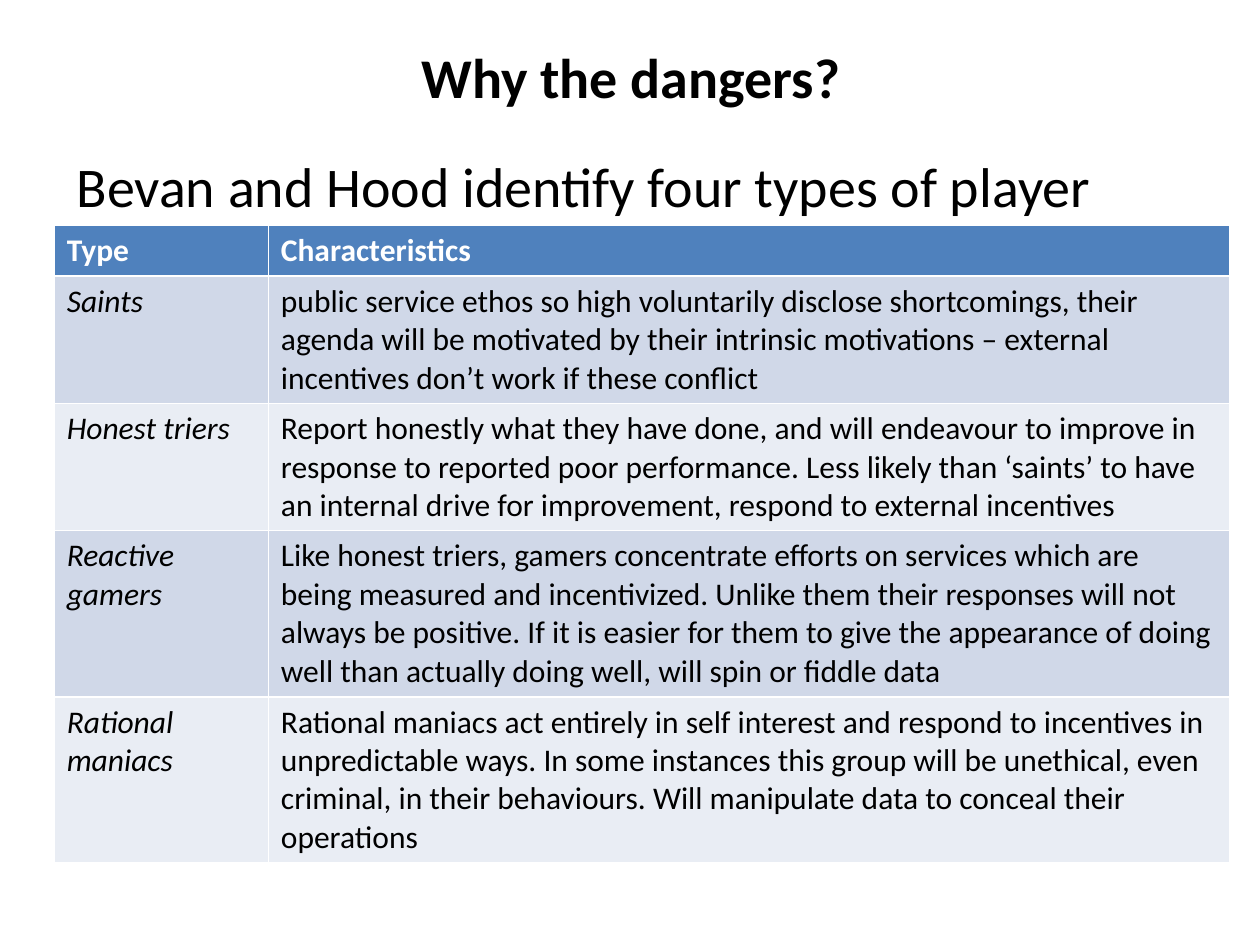
from typing import NamedTuple

from pptx import Presentation
from pptx.dml.color import RGBColor
from pptx.enum import text
from pptx.util import Inches, Pt

FONT = "Calibri"
COLORS = {
    "text": "000000",
    "header_text": "FFFFFF",
    "header": "4F81BD",
    "band_dark": "D0D8E8",
    "band_light": "E9EDF4",
}


class Player(NamedTuple):
    type: str
    characteristics: str
    height: float


PLAYERS = [
    Player("Saints",
           "public service ethos so high voluntarily disclose shortcomings, their agenda "
           "will be motivated by their intrinsic motivations – external incentives don’t "
           "work if these conflict", 1.01),
    Player("Honest triers",
           "Report honestly what they have done, and will endeavour to improve in response "
           "to reported poor performance. Less likely than ‘saints’ to have an internal "
           "drive for improvement, respond to external incentives", 1.01),
    Player("Reactive gamers",
           "Like honest triers, gamers concentrate efforts on services which are being "
           "measured and incentivized. Unlike them their responses will not always be "
           "positive. If it is easier for them to give the appearance of doing well than "
           "actually doing well, will spin or fiddle data", 1.32),
    Player("Rational maniacs",
           "Rational maniacs act entirely in self interest and respond to incentives in "
           "unpredictable ways. In some instances this group will be unethical, even "
           "criminal, in their behaviours. Will manipulate data to conceal their "
           "operations", 1.32),
]
HEADER_HEIGHT = 0.4
COLUMN_WIDTHS = (1.7, 7.63)


def write(text_frame, words: str, size: float, color: str = "text",
          bold: bool = False, italic: bool = False) -> None:
    text_frame.text = words
    font = text_frame.paragraphs[0].runs[0].font
    font.name, font.size = FONT, Pt(size)
    font.bold, font.italic = bold, italic
    font.color.rgb = RGBColor.from_string(COLORS[color])


def fill_cell(cell, words: str, fill: str, **style) -> None:
    cell.fill.solid()
    cell.fill.fore_color.rgb = RGBColor.from_string(COLORS[fill])
    write(cell.text_frame, words, 18, **style)


def add_title(slide) -> None:
    title = slide.shapes.title
    title.left, title.top = Inches(0.51), Inches(-0.02)
    title.width, title.height = Inches(9), Inches(1.25)
    write(title.text_frame, "Why the dangers?", 32, bold=True)
    title.text_frame.vertical_anchor = text.MSO_ANCHOR.MIDDLE
    title.text_frame.paragraphs[0].alignment = text.PP_ALIGN.CENTER


def add_introduction(slide) -> None:
    box = slide.shapes.add_textbox(Inches(0.51), Inches(1.15), Inches(9), Inches(4.95))
    box.text_frame.word_wrap = True
    write(box.text_frame, "Bevan and Hood identify four types of player", 32)


def add_player_table(slide) -> None:
    heights = [HEADER_HEIGHT] + [player.height for player in PLAYERS]
    table = slide.shapes.add_table(
        len(heights), len(COLUMN_WIDTHS), Inches(0.43), Inches(1.79),
        Inches(sum(COLUMN_WIDTHS)), Inches(sum(heights))).table
    for column, width in zip(table.columns, COLUMN_WIDTHS):
        column.width = Inches(width)
    for row, height in zip(table.rows, heights):
        row.height = Inches(height)
    for index, heading in enumerate(("Type", "Characteristics")):
        fill_cell(table.cell(0, index), heading, "header", color="header_text", bold=True)
    for index, player in enumerate(PLAYERS, start=1):
        band = "band_dark" if index % 2 else "band_light"
        fill_cell(table.cell(index, 0), player.type, band, italic=True)
        fill_cell(table.cell(index, 1), player.characteristics, band)


def main() -> None:
    presentation = Presentation()
    presentation.slide_width, presentation.slide_height = Inches(10), Inches(7.5)
    slide = presentation.slides.add_slide(presentation.slide_layouts[5])
    add_title(slide)
    add_introduction(slide)
    add_player_table(slide)
    presentation.save("out.pptx")


if __name__ == "__main__":
    main()
